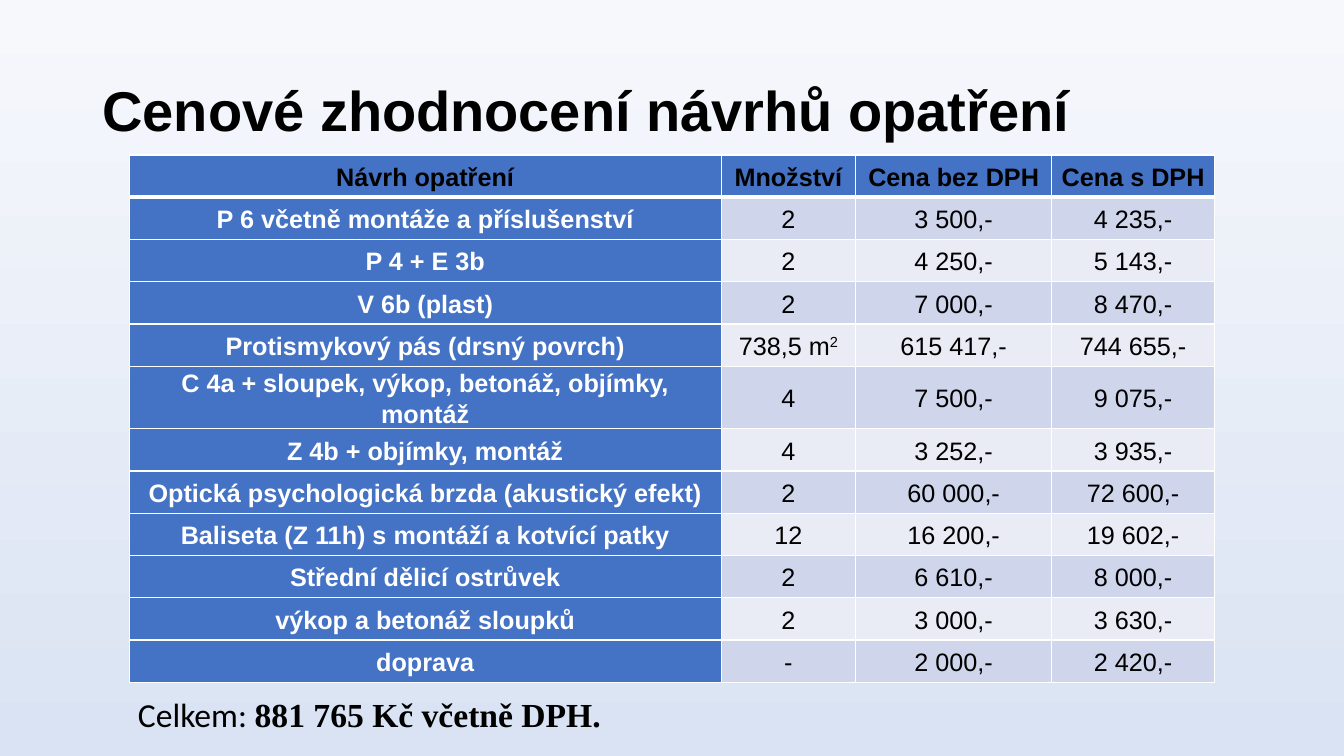
from lxml.etree import SubElement
from pptx import Presentation
from pptx.dml.color import RGBColor
from pptx.enum.text import MSO_ANCHOR, MSO_AUTO_SIZE, PP_ALIGN
from pptx.oxml.ns import qn
from pptx.util import Pt

# Content
TITLE = "Cenové zhodnocení návrhů opatření"
HEADER = ("Návrh opatření", "Množství", "Cena bez DPH", "Cena s DPH")
MEASURES = [
    ("P 6 včetně montáže a příslušenství", "2", "3 500,-", "4 235,-"),
    ("P 4 + E 3b", "2", "4 250,-", "5 143,-"),
    ("V 6b (plast)", "2", "7 000,-", "8 470,-"),
    ("Protismykový pás (drsný povrch)", ("738,5 m", "2"), "615 417,-", "744 655,-"),
    ("C 4a + sloupek, výkop, betonáž, objímky, montáž", "4", "7 500,-", "9 075,-"),
    ("Z 4b + objímky, montáž", "4", "3 252,-", "3 935,-"),
    ("Optická psychologická brzda (akustický efekt)", "2", "60 000,-", "72 600,-"),
    ("Baliseta (Z 11h) s montáží a kotvící patky", "12", "16 200,-", "19 602,-"),
    ("Střední dělicí ostrůvek", "2", "6 610,-", "8 000,-"),
    ("výkop a betonáž sloupků", "2", "3 000,-", "3 630,-"),
    ("doprava", "-", "2 000,-", "2 420,-"),
]
TOTAL = [("Celkem: ", "Calibri", False), ("881 765 Kč včetně DPH.", "Times New Roman", True)]

# Look
BLACK = RGBColor(0x00, 0x00, 0x00)
WHITE = RGBColor(0xFF, 0xFF, 0xFF)
BLUE = RGBColor(0x44, 0x72, 0xC4)
BANDS = (RGBColor(0xCF, 0xD5, 0xEA), RGBColor(0xE9, 0xEB, 0xF5))
BACKGROUND = (RGBColor(0xF6, 0xF8, 0xFC), RGBColor(0xDA, 0xE3, 0xF3))

# Layout in points
TITLE_BOX = (66, 28.8, 828, 104.4)
TOTAL_BOX = (91.5, 459.4, 828, 104.4)
TABLE_LEFT, TABLE_TOP = 92.3, 110.7
COL_WIDTHS = (422.8, 96.2, 139.9, 116.5)
ROW_HEIGHT, TALL_ROW_HEIGHT, TALL_ROW = 30.2, 44.6, 5


def set_borders(cell, top, bottom):
    tcPr = cell._tc.get_or_add_tcPr()
    for side, width in (("L", 1), ("R", 1), ("T", top), ("B", bottom)):
        ln = SubElement(tcPr, qn("a:ln" + side), w=str(Pt(width)))
        fill = SubElement(ln, qn("a:solidFill"))
        SubElement(fill, qn("a:srgbClr"), val=str(WHITE))


def fill_cell(cell, content, row, col):
    is_head, is_label = row == 0, col == 0
    set_borders(cell, 3 if row == 1 else 1, 3 if is_head else 1)
    cell.fill.solid()
    cell.fill.fore_color.rgb = BLUE if is_head or is_label else BANDS[(row - 1) % 2]
    cell.vertical_anchor = MSO_ANCHOR.MIDDLE
    cell.margin_left = cell.margin_right = Pt(5)
    cell.margin_top = cell.margin_bottom = 0
    p = cell.text_frame.paragraphs[0]
    p.alignment = PP_ALIGN.CENTER
    p.line_spacing = 1.1
    p.space_after = Pt(0.2)
    p.font.name, p.font.size = "Arial", Pt(18)
    p.font.bold = is_head or is_label
    p.font.color.rgb = WHITE if is_label and not is_head else BLACK
    text, superscript = content if isinstance(content, tuple) else (content, "")
    p.add_run().text = text
    if superscript:
        r = p.add_run()
        r.text = superscript
        r._r.get_or_add_rPr().set("baseline", "30000")


def prepare_frame(tf):
    tf.word_wrap = True
    tf.auto_size = MSO_AUTO_SIZE.NONE
    tf.vertical_anchor = MSO_ANCHOR.MIDDLE
    p = tf.paragraphs[0]
    p.alignment = PP_ALIGN.LEFT
    p.line_spacing = 0.9
    return p


prs = Presentation()
prs.slide_width, prs.slide_height = Pt(960), Pt(540)
s = prs.slides.add_slide(prs.slide_layouts[5])

# Background
bg = s.background.fill
bg.gradient()
bg.gradient_angle = 270
for stop, color in zip(bg.gradient_stops, BACKGROUND):
    stop.color.rgb = color

# Title
sp = s.shapes.title
sp.left, sp.top, sp.width, sp.height = map(Pt, TITLE_BOX)
sp.text_frame.text = TITLE
p = prepare_frame(sp.text_frame)
p.font.name, p.font.size, p.font.bold = "Arial", Pt(40), True
p.font.color.rgb = BLACK

# Price table
rows = [HEADER] + MEASURES
heights = [TALL_ROW_HEIGHT if i == TALL_ROW else ROW_HEIGHT for i in range(len(rows))]
table = s.shapes.add_table(len(rows), len(HEADER), Pt(TABLE_LEFT), Pt(TABLE_TOP),
                           Pt(sum(COL_WIDTHS)), Pt(sum(heights))).table
for column, width in zip(table.columns, COL_WIDTHS):
    column.width = Pt(width)
for i, (values, height) in enumerate(zip(rows, heights)):
    table.rows[i].height = Pt(height)
    for j, value in enumerate(values):
        fill_cell(table.cell(i, j), value, i, j)

# Total
sp = s.shapes.add_textbox(*map(Pt, TOTAL_BOX))
p = prepare_frame(sp.text_frame)
p.font.size = Pt(24)
p.font.color.rgb = BLACK
for text, font, bold in TOTAL:
    r = p.add_run()
    r.text = text
    r.font.name, r.font.bold = font, bold

prs.save("out.pptx")
